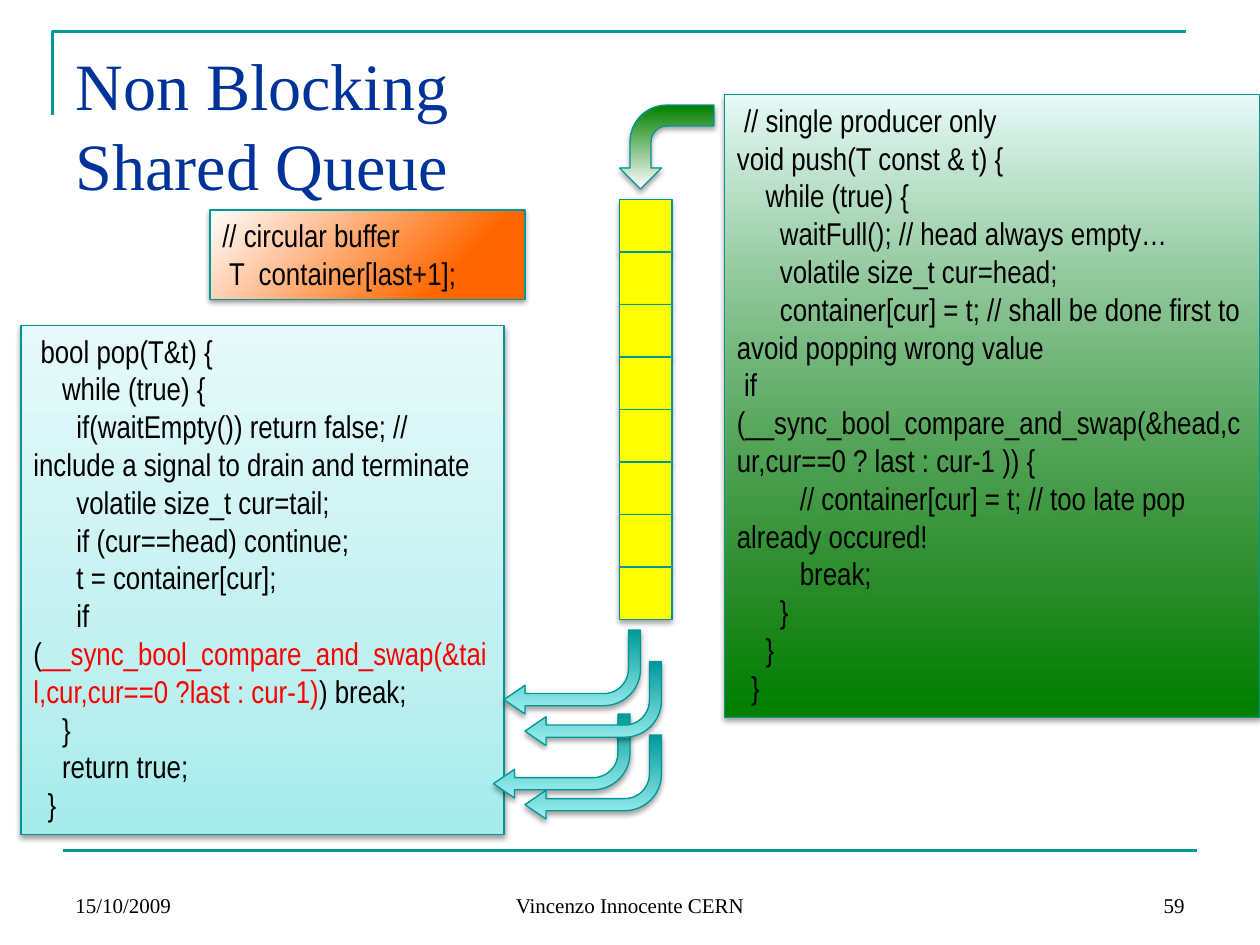
from dataclasses import dataclass

from lxml import etree
from pptx import Presentation
from pptx import util as u
from pptx.dml.color import RGBColor
from pptx.enum import shapes, text
from pptx.oxml.ns import qn

Pt = u.Pt


@dataclass(frozen=True)
class Theme:
    heading_font: str = "Times New Roman"
    code_font: str = "Arial Narrow"
    title_size: float = 37.8
    title_leading: float = 45.7
    code_size: float = 18
    footer_size: float = 12
    title: str = "003399"
    ink: str = "000000"
    atomic: str = "FF0000"
    rule: str = "009999"
    outline: str = "009696"
    cell: str = "FFFF00"
    # Gradient stops: position, colour, opacity (all percent)
    push_stops: tuple = ((0, "008000", 100), (21, "008000", 76), (100, "E7FAFA", 100))
    pop_stops: tuple = ((0, "A5EBEB", 100), (35, "C1F0F0", 100), (100, "E7FAFA", 100))
    buffer_stops: tuple = ((24, "FF6600", 100), (100, "FFFFFF", 100))
    push_arrow_stops: tuple = ((0, "008000", 100), (100, "FFFFFF", 100))
    pop_arrow_stops: tuple = ((0, "009999", 100), (100, "9FF1F1", 100))


def add_node(parent, tag, **attributes):
    return etree.SubElement(parent, qn(tag), {k: str(v) for k, v in attributes.items()})


def add_color(parent, color, opacity):
    node = add_node(parent, "a:srgbClr", val=color)
    if opacity < 100:
        add_node(node, "a:alpha", val=opacity * 1000)


class SlideBuilder:
    def __init__(self, slide, theme):
        self.slide, self.theme = slide, theme

    def set_font(self, paragraph, name, size, color):
        paragraph.font.name = name
        paragraph.font.size = Pt(size)
        paragraph.font.color.rgb = RGBColor.from_string(color)

    def title(self, wording, left, top, width, height):
        title = self.slide.shapes.title
        title.left, title.top, title.width, title.height = map(Pt, (left, top, width, height))
        frame = title.text_frame
        frame.text = wording
        frame.word_wrap = True
        frame.auto_size = text.MSO_AUTO_SIZE.NONE
        frame.vertical_anchor = text.MSO_ANCHOR.TOP
        heading = frame.paragraphs[0]
        heading.alignment = text.PP_ALIGN.LEFT
        heading.line_spacing = Pt(self.theme.title_leading)
        self.set_font(heading, self.theme.heading_font, self.theme.title_size, self.theme.title)

    def footer(self, wording, left, width, alignment):
        frame = self.slide.shapes.add_textbox(Pt(left), Pt(492), Pt(width), Pt(36)).text_frame
        frame.word_wrap = True
        frame.vertical_anchor = text.MSO_ANCHOR.BOTTOM
        entry = frame.paragraphs[0]
        entry.text = wording
        entry.alignment = alignment
        self.set_font(entry, self.theme.heading_font, self.theme.footer_size, self.theme.ink)

    def style_rule(self, rule):
        rule.line.color.rgb = RGBColor.from_string(self.theme.rule)
        rule.line.width = Pt(1.5)

    def corner_rule(self, start, *points):
        builder = self.slide.shapes.build_freeform(*start, scale=Pt(1))
        builder.add_line_segments(points, close=False)
        corner = builder.convert_to_shape()
        corner.fill.background()
        self.style_rule(corner)
        corner.shadow.inherit = False

    def straight_rule(self, *ends):
        rule = self.slide.shapes.add_connector(shapes.MSO_CONNECTOR.STRAIGHT, *map(Pt, ends))
        self.style_rule(rule)
        add_node(rule._element.spPr, "a:effectLst")

    def gradient(self, shape, stops, angle=None):
        """Fill with stops; without an angle, radiate from the bottom right corner."""
        shape.fill.gradient()
        fill = shape._element.spPr.find(qn("a:gradFill"))
        for child in list(fill):
            fill.remove(child)
        fill.set("rotWithShape", "1")
        stop_list = add_node(fill, "a:gsLst")
        for position, color, opacity in stops:
            add_color(add_node(stop_list, "a:gs", pos=position * 1000), color, opacity)
        if angle is None:
            radial = add_node(fill, "a:path", path="circle")
            add_node(radial, "a:fillToRect", l=100000, t=100000)
        else:
            add_node(fill, "a:lin", ang=angle * 60000, scaled=0)

    def finish(self, shape, distance=1.8, opacity=35):
        """Add the outline and the soft shadow below."""
        shape.line.color.rgb = RGBColor.from_string(self.theme.outline)
        shape.line.width = Pt(0.75)
        shape.shadow.inherit = False
        effects = shape._element.spPr.find(qn("a:effectLst"))
        shadow = add_node(effects, "a:outerShdw", blurRad=Pt(3.1), dist=Pt(distance),
                          dir=90 * 60000, rotWithShape=0)
        add_color(shadow, "000000", opacity)

    def code_box(self, lines, left, top, width, height, stops, angle=None):
        """Each line is a string, or a tuple whose odd pieces are highlighted."""
        box = self.slide.shapes.add_shape(
            shapes.MSO_SHAPE.RECTANGLE, Pt(left), Pt(top), Pt(width), Pt(height))
        self.gradient(box, stops, angle)
        self.finish(box, distance=1.6, opacity=38)
        frame = box.text_frame
        frame.word_wrap = True
        frame.vertical_anchor = text.MSO_ANCHOR.TOP
        for index, line in enumerate(lines):
            paragraph = frame.add_paragraph() if index else frame.paragraphs[0]
            paragraph.alignment = text.PP_ALIGN.LEFT
            self.set_font(paragraph, self.theme.code_font, self.theme.code_size, self.theme.ink)
            for part, piece in enumerate((line,) if isinstance(line, str) else line):
                run = paragraph.add_run()
                run.text = piece
                if part % 2:
                    run.font.color.rgb = RGBColor.from_string(self.theme.atomic)

    def queue(self, left, top, side, count):
        group = self.slide.shapes.add_group_shape()
        for index in range(count):
            cell = group.shapes.add_shape(shapes.MSO_SHAPE.RECTANGLE, Pt(left),
                                          Pt(top + index * side), Pt(side), Pt(side))
            cell.fill.solid()
            cell.fill.fore_color.rgb = RGBColor.from_string(self.theme.cell)
            self.finish(cell)

    def bent_arrow(self, left, top, width, height, rotation, stops, angle,
                   adjustments=(), flip=False):
        arrow = self.slide.shapes.add_shape(
            shapes.MSO_SHAPE.BENT_ARROW, Pt(left), Pt(top), Pt(width), Pt(height))
        for index, value in enumerate(adjustments):
            arrow.adjustments[index] = value
        arrow.rotation = rotation
        if flip:
            arrow._element.spPr.find(qn("a:xfrm")).set("flipH", "1")
        self.gradient(arrow, stops, angle)
        self.finish(arrow)


PUSH_CODE = (
    " // single producer only",
    "void push(T const & t) {",
    "    while (true) {",
    "      waitFull(); // head always empty…",
    "      volatile size_t cur=head;",
    "      container[cur] = t; // shall be done first to avoid popping wrong value",
    " if (__sync_bool_compare_and_swap(&head,cur,cur==0 ? last : cur-1 )) {",
    "\t// container[cur] = t; // too late pop already occured!",
    "\tbreak;",
    "      }",
    "    }",
    "  }",
)
POP_CODE = (
    " bool pop(T&t) {",
    "    while (true) {",
    "      if(waitEmpty()) return false; // include a signal to drain and terminate",
    "      volatile size_t cur=tail;",
    "      if (cur==head) continue;",
    "      t = container[cur];",
    ("      if (", "__sync_bool_compare_and_swap(&tail,cur,cur==0 ?last : cur-1)", ") break;"),
    "    }",
    "    return true;",
    "  }",
)
BUFFER_CODE = ("// circular buffer", " T  container[last+1];")


def main():
    deck = Presentation()
    deck.slide_width, deck.slide_height = Pt(720), Pt(540)
    theme = Theme()
    page = SlideBuilder(deck.slides.add_slide(deck.slide_layouts[5]), theme)

    page.corner_rule((30, 66), (30, 18), (678, 18))
    page.straight_rule(36, 486, 684, 486)
    page.title("Non Blocking\vShared Queue", 36, 21.6, 648, 90)
    page.footer("15/10/2009", 36, 168, text.PP_ALIGN.LEFT)
    page.footer("Vincenzo Innocente CERN", 246, 228, text.PP_ALIGN.CENTER)
    page.footer("59", 516, 168, text.PP_ALIGN.RIGHT)

    page.code_box(PUSH_CODE, 414, 54, 306, 356, theme.push_stops, 270)
    page.code_box(POP_CODE, 12, 186, 276, 291, theme.pop_stops, 270)
    page.queue(354, 114, 30, 8)
    page.bent_arrow(357, 57, 48, 54, 270, theme.push_arrow_stops, 0, flip=True)
    for left, top in ((288, 360), (282, 408), (300, 378), (300, 420)):
        page.bent_arrow(left, top, 78, 48, 180, theme.pop_arrow_stops, 270,
                        adjustments=(0.144, 0.171, 0.25, 0.438))
    page.code_box(BUFFER_CODE, 120, 120, 180, 51, theme.buffer_stops)

    deck.save("out.pptx")


if __name__ == "__main__":
    main()
